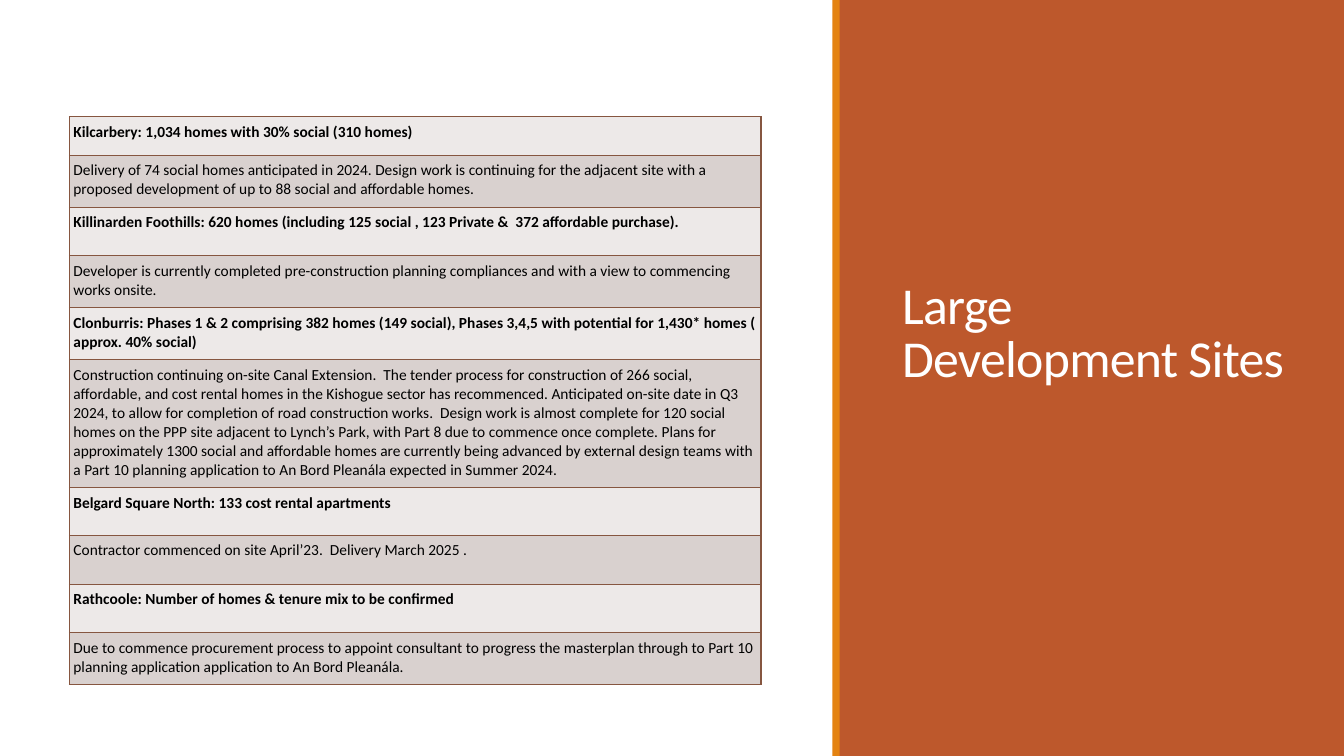
from dataclasses import dataclass

from lxml.etree import SubElement
from pptx import Presentation
from pptx.dml.color import RGBColor
from pptx.enum.shapes import MSO_SHAPE as Preset
from pptx.enum.text import MSO_ANCHOR as Anchor, MSO_AUTO_SIZE as AutoSize, PP_ALIGN as Align
from pptx.oxml.ns import qn
from pptx.slide import Slide
from pptx.table import _Cell as Cell
from pptx.util import Cm, Pt


@dataclass(frozen=True)
class Theme:
    font: str = "Calibri"
    title_size: float = 37
    body_size: float = 11
    border_width: float = 1
    panel: str = "BD582C"
    accent: str = "E48312"
    white: str = "FFFFFF"
    text: str = "000000"
    heading_fill: str = "EDE9E8"
    detail_fill: str = "D9D1CF"
    border: str = "865640"


@dataclass(frozen=True)
class Band:
    left: float
    width: float
    color: str


@dataclass(frozen=True)
class Site:
    heading: str
    detail: str
    heading_height: float = 1.22
    detail_height: float = 1.22
    detail_spacing: float = 1.0


THEME = Theme()
SLIDE_WIDTH, SLIDE_HEIGHT = 33.87, 19.05
TABLE_LEFT, TABLE_TOP, TABLE_WIDTH = 1.75, 2.94, 17.43

BANDS = [
    Band(21.15, 12.72, THEME.panel),
    Band(20.98, 0.18, THEME.accent),
]

SITES = [
    Site(
        "Kilcarbery: 1,034 homes with 30% social (310 homes)",
        "Delivery of 74 social homes anticipated in 2024. Design work is continuing for the "
        "adjacent site with a proposed development of up to 88 social and affordable homes.",
        heading_height=0.97,
        detail_height=0.84,
    ),
    Site(
        "Killinarden Foothills: 620 homes (including 125 social , 123 Private &  372 affordable purchase).",
        "Developer is currently completed pre-construction planning compliances and with a view "
        "to commencing works onsite.",
    ),
    Site(
        "Clonburris: Phases 1 & 2 comprising 382 homes (149 social), Phases 3,4,5 with potential "
        "for 1,430* homes ( approx. 40% social)",
        "Construction continuing on-site Canal Extension.  The tender process for construction of "
        "266 social, affordable, and cost rental homes in the Kishogue sector has recommenced. "
        "Anticipated on-site date in Q3 2024, to allow for completion of road construction works.  "
        "Design work is almost complete for 120 social homes on the PPP site adjacent to Lynch’s "
        "Park, with Part 8 due to commence once complete. Plans for approximately 1300 social and "
        "affordable homes are currently being advanced by external design teams with a Part 10 "
        "planning application to An Bord Pleanála expected in Summer 2024.",
    ),
    Site(
        "Belgard Square North: 133 cost rental apartments",
        "Contractor commenced on site April’23.  Delivery March 2025 .",
        detail_spacing=0.9,
    ),
    Site(
        "Rathcoole: Number of homes & tenure mix to be confirmed",
        "Due to commence procurement process to appoint consultant to progress the masterplan "
        "through to Part 10 planning application application to An Bord Pleanála.",
    ),
]


def rgb(color: str) -> RGBColor:
    return RGBColor.from_string(color)


def draw_band(slide: Slide, band: Band) -> None:
    stripe = slide.shapes.add_shape(
        Preset.RECTANGLE, Cm(band.left), 0, Cm(band.width), Cm(SLIDE_HEIGHT)
    )
    stripe.shadow.inherit = False
    stripe.fill.solid()
    stripe.fill.fore_color.rgb = rgb(band.color)
    stripe.line.fill.background()


def draw_title(slide: Slide, wording: str) -> None:
    title = slide.shapes.title
    title.left, title.top, title.width, title.height = Cm(22.48), Cm(1.78), Cm(10.16), Cm(8.13)
    frame = title.text_frame
    frame.text = wording
    frame.word_wrap = True
    frame.auto_size = AutoSize.NONE
    frame.vertical_anchor = Anchor.BOTTOM
    paragraph = frame.paragraphs[0]
    paragraph.alignment = Align.LEFT
    paragraph.line_spacing = 0.85
    paragraph.space_after = Pt(6)
    paragraph.font.name = THEME.font
    paragraph.font.size = Pt(THEME.title_size)
    paragraph.font.color.rgb = rgb(THEME.white)
    # Tightened letter spacing, in hundredths of a point
    paragraph.runs[0].font._element.set("spc", "-50")
    # Bring the title in front of the panel
    title.element.getparent().append(title.element)


def draw_borders(cell: Cell) -> None:
    properties = cell._tc.get_or_add_tcPr()
    for position, side in enumerate(("lnL", "lnR", "lnT", "lnB")):
        line = SubElement(properties, qn(f"a:{side}"), w=str(Pt(THEME.border_width)))
        SubElement(SubElement(line, qn("a:solidFill")), qn("a:srgbClr"), val=THEME.border)
        properties.insert(position, line)


def fill_cell(cell: Cell, wording: str, is_heading: bool, spacing: float) -> None:
    cell.fill.solid()
    cell.fill.fore_color.rgb = rgb(THEME.heading_fill if is_heading else THEME.detail_fill)
    cell.margin_left = cell.margin_right = Cm(0.1)
    cell.margin_top, cell.margin_bottom = Cm(0.15), Cm(0.2)
    cell.text = wording
    paragraph = cell.text_frame.paragraphs[0]
    paragraph.line_spacing = spacing
    paragraph.font.name = THEME.font
    paragraph.font.size = Pt(THEME.body_size)
    paragraph.font.bold = is_heading
    paragraph.font.color.rgb = rgb(THEME.text)
    draw_borders(cell)


def draw_sites(slide: Slide, sites: list[Site]) -> None:
    total_height = sum(site.heading_height + site.detail_height for site in sites)
    table = slide.shapes.add_table(
        2 * len(sites), 1, Cm(TABLE_LEFT), Cm(TABLE_TOP), Cm(TABLE_WIDTH), Cm(total_height)
    ).table
    table.first_row = table.horz_banding = False
    for index, site in enumerate(sites):
        heading_row, detail_row = 2 * index, 2 * index + 1
        table.rows[heading_row].height = Cm(site.heading_height)
        table.rows[detail_row].height = Cm(site.detail_height)
        fill_cell(table.cell(heading_row, 0), site.heading, True, 1.0)
        fill_cell(table.cell(detail_row, 0), site.detail, False, site.detail_spacing)


def main() -> None:
    deck = Presentation()
    deck.slide_width, deck.slide_height = Cm(SLIDE_WIDTH), Cm(SLIDE_HEIGHT)
    slide = deck.slides.add_slide(deck.slide_layouts[5])
    slide.background.fill.solid()
    slide.background.fill.fore_color.rgb = rgb(THEME.white)

    # Right-hand panel with its title
    for band in BANDS:
        draw_band(slide, band)
    draw_title(slide, "Large Development Sites")

    # Development sites: a heading row and a detail row each
    draw_sites(slide, SITES)
    deck.save("out.pptx")


if __name__ == "__main__":
    main()
